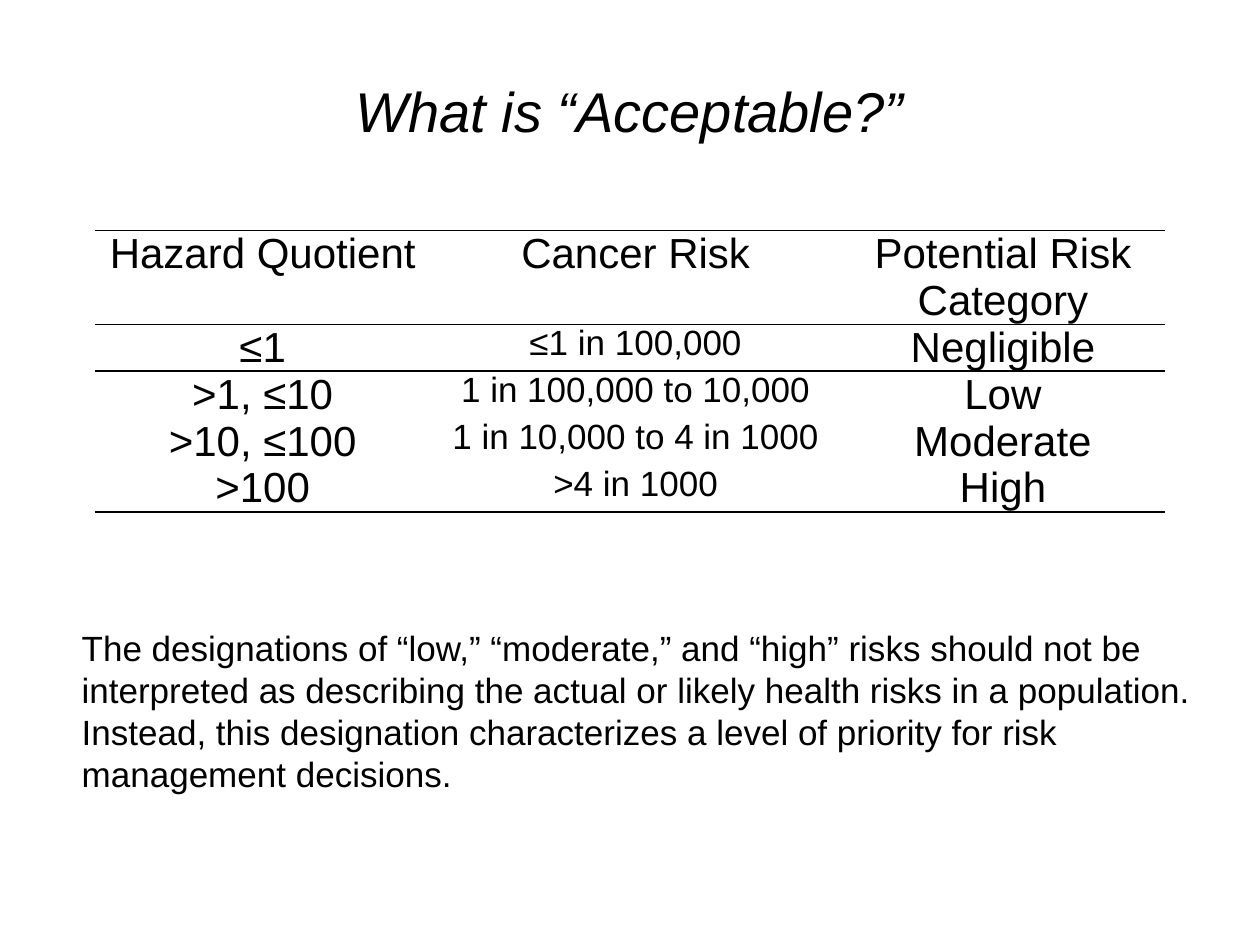
from pptx import Presentation
from pptx.dml.color import RGBColor
from pptx.enum.text import MSO_ANCHOR as Anchor, PP_ALIGN as Align
from pptx.oxml import parse_xml
from pptx.oxml.ns import nsdecls, qn
from pptx.util import Inches, Pt

BLACK = RGBColor(0, 0, 0)
NO_GRID = "{2D5ABB26-0587-4C30-8999-92F81FD0307C}"

deck = Presentation()
deck.slide_width, deck.slide_height = Inches(10), Inches(7.5)
slide = deck.slides.add_slide(deck.slide_layouts[5])


def write(frame, text, size=24, align=Align.CENTER, anchor=Anchor.TOP, italic=False):
    frame.word_wrap = True
    frame.vertical_anchor = anchor
    para = frame.paragraphs[0]
    para.alignment = align
    run = para.add_run()
    run.text = text
    font = run.font
    font.name, font.size, font.italic = "Arial", Pt(size), italic
    font.color.rgb = BLACK


def rule(cell, side):
    line = parse_xml(
        f'<a:{side} {nsdecls("a")} w="{Pt(1)}"><a:solidFill>'
        f'<a:srgbClr val="{BLACK}"/></a:solidFill></a:{side}>')
    props = cell._tc.get_or_add_tcPr()
    props.insert(len(props) - 1, line)  # lines come before the fill


# Title
title = slide.shapes.title
title.left, title.top = Inches(0.75), Inches(0.25)
title.width, title.height = Inches(8.5), Inches(1.25)
write(title.text_frame, "What is “Acceptable?”", size=32, anchor=Anchor.MIDDLE, italic=True)

# Risk table: the header takes two lines, each level one
LINE = 0.37
WIDTHS = [2.67, 3.25, 2.58]
ROWS = [
    ["Hazard Quotient", "Cancer Risk", "Potential Risk Category"],
    ["≤1", "≤1 in 100,000", "Negligible"],
    [">1, ≤10", "1 in 100,000 to 10,000", "Low"],
    [">10, ≤100", "1 in 10,000 to 4 in 1000", "Moderate"],
    [">100", ">4 in 1000", "High"],
]
LAST = len(ROWS) - 1
table = slide.shapes.add_table(
    len(ROWS), len(WIDTHS), Inches(0.75), Inches(1.83),
    Inches(sum(WIDTHS)), Inches(LINE * (len(ROWS) + 1))).table
table.first_row = table.horz_banding = False
table._tbl.tblPr.find(qn("a:tableStyleId")).text = NO_GRID
for col, width in zip(table.columns, WIDTHS):
    col.width = Inches(width)

for r, texts in enumerate(ROWS):
    table.rows[r].height = Inches(LINE * (2 if r == 0 else 1))
    for c, text in enumerate(texts):
        cell = table.cell(r, c)
        cell.margin_left = cell.margin_right = Inches(0.07)
        cell.margin_top = cell.margin_bottom = 0
        cell.fill.background()
        write(cell.text_frame, text, size=20 if r and c == 1 else 24)
        if r in (0, 1):
            rule(cell, "lnT")
        if r in (0, LAST):
            rule(cell, "lnB")

# Note below the table
note = slide.shapes.add_textbox(Inches(0.55), Inches(4.92), Inches(9), Inches(1.45))
write(note.text_frame,
      "The designations of “low,” “moderate,” and “high” risks should not be "
      "interpreted as describing the actual or likely health risks in a population. "
      "Instead, this designation characterizes a level of priority for risk "
      "management decisions.", size=20, align=Align.LEFT)

deck.save("out.pptx")
